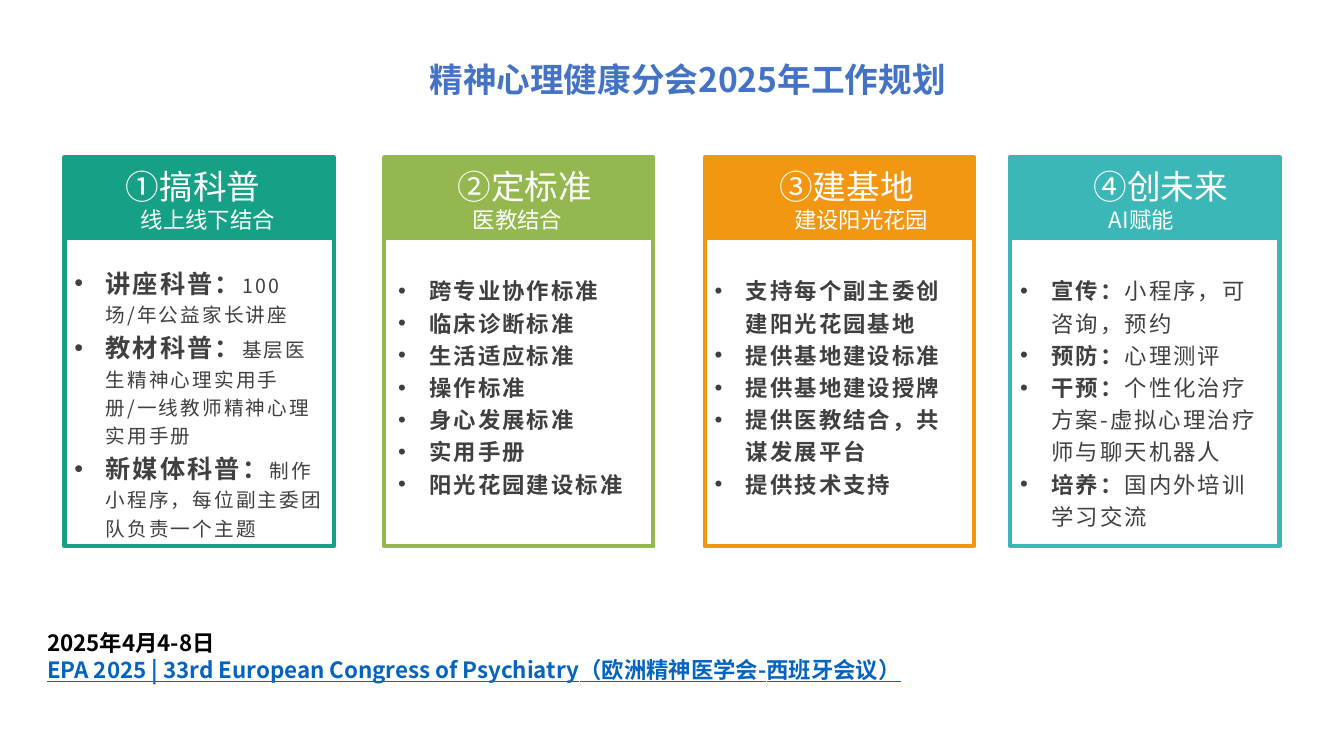
import pptx
import pptx.util
import pptx.dml.color
import pptx.enum.shapes
import pptx.enum.text
import pptx.oxml.ns
import lxml.etree

Inches, Pt = pptx.util.Inches, pptx.util.Pt
SANS = "Noto Sans CJK SC"
COLOURS = {"teal": "16A086", "green": "94B74F", "orange": "F39712", "cyan": "3AB7B6",
           "title": "4472C4", "body": "404040", "white": "FFFFFF", "black": "000000",
           "link": "0563C1"}
TITLE = "精神心理健康分会2025年工作规划"
FOOTER = [("2025年4月4-8日", "black"),
          ("EPA 2025 | 33rd European Congress of Psychiatry（欧洲精神医学会-西班牙会议）", "link")]
CARDS = [
    {"left": 0.64, "colour": "teal", "heading": "①搞科普", "subheading": "线上线下结合",
     "font": SANS, "heading_box": (1.15, 1.89), "body_box": (0.64, 2.55, 2.67, 2.71),
     "sizes": (18, 14), "items": [
         ("讲座科普：", "100场/年公益家长讲座"),
         ("教材科普：", "基层医生精神心理实用手册/一线教师精神心理实用手册"),
         ("新媒体科普：", "制作小程序，每位副主委团队负责一个主题")]},
    {"left": 3.81, "colour": "green", "heading": "②定标准", "subheading": "医教结合",
     "font": SANS, "heading_box": (4.44, 1.53), "body_box": (3.85, 2.65, 2.75, 2.52),
     "sizes": (16, 16), "items": [
         ("跨专业协作标准",), ("临床诊断标准",), ("生活适应标准",), ("操作标准",),
         ("身心发展标准",), ("实用手册",), ("阳光花园建设标准",)]},
    {"left": 6.99, "colour": "orange", "heading": "③建基地", "subheading": "建设阳光花园",
     "font": "Calibri", "heading_box": (7.63, 1.73), "body_box": (6.99, 2.65, 2.67, 2.52),
     "sizes": (16, 16), "items": [
         ("支持每个副主委创建阳光花园基地",), ("提供基地建设标准",), ("提供基地建设授牌",),
         ("提供医教结合，共谋发展平台",), ("提供技术支持",)]},
    {"left": 10.02, "colour": "cyan", "heading": "④创未来", "subheading": "AI赋能",
     "font": SANS, "heading_box": (10.75, 1.53), "body_box": (10.02, 2.65, 2.67, 2.52),
     "sizes": (16, 16), "items": [
         ("宣传：", "小程序，可咨询，预约"), ("预防：", "心理测评"),
         ("干预：", "个性化治疗方案-虚拟心理治疗师与聊天机器人"),
         ("培养：", "国内外培训学习交流")]},
]
CARD_TOP, CARD_WIDTH, CARD_HEIGHT, BAND_HEIGHT = 1.56, 2.67, 3.86, 0.82


def rgb(name):
    return pptx.dml.color.RGBColor.from_string(COLOURS[name])


def set_font(font, size, colour, bold=False, name=SANS):
    font.size, font.bold, font.name = Pt(size), bold, name
    font.color.rgb = rgb(colour)


def add_span(para, text):
    span = para.add_run()
    span.text = text
    properties = span._r.get_or_add_rPr()
    east_asian = lxml.etree.SubElement(properties, pptx.oxml.ns.qn("a:ea"))
    east_asian.set("typeface", SANS)
    return span


def add_box(page, left, top, width, height):
    box = page.shapes.add_textbox(Inches(left), Inches(top), Inches(width), Inches(height))
    box.text_frame.word_wrap = True
    return box.text_frame


def next_para(frame, index):
    return frame.add_paragraph() if index else frame.paragraphs[0]


def add_rectangle(page, left, height, fill=None, line=None):
    box = page.shapes.add_shape(pptx.enum.shapes.MSO_SHAPE.RECTANGLE, Inches(left),
                                Inches(CARD_TOP), Inches(CARD_WIDTH), Inches(height))
    box.shadow.inherit = False
    if fill:
        box.fill.solid()
        box.fill.fore_color.rgb = rgb(fill)
    else:
        box.fill.background()
    if line:
        box.line.color.rgb = rgb(line)
        box.line.width = Pt(3)
    else:
        box.line.fill.background()


def add_bullet(para):
    properties = para._p.get_or_add_pPr()
    properties.set("marL", str(Inches(0.31)))
    properties.set("indent", str(-Inches(0.31)))
    font = lxml.etree.SubElement(properties, pptx.oxml.ns.qn("a:buFont"))
    font.set("typeface", "Arial")
    mark = lxml.etree.SubElement(properties, pptx.oxml.ns.qn("a:buChar"))
    mark.set("char", "•")


def add_card(page, card):
    add_rectangle(page, card["left"], BAND_HEIGHT, fill=card["colour"])
    add_rectangle(page, card["left"], CARD_HEIGHT, line=card["colour"])

    left, width = card["heading_box"]
    frame = add_box(page, left, 1.6, width, 0.77)
    lines = [(card["heading"], 24, card["font"]), (card["subheading"], 16, SANS)]
    for index, (text, size, name) in enumerate(lines):
        para = next_para(frame, index)
        if index:
            para._p.get_or_add_pPr().set("marL", str(Inches(0.15)))
        set_font(para.font, size, "white", name=name)
        add_span(para, text)

    frame = add_box(page, *card["body_box"])
    for index, parts in enumerate(card["items"]):
        para = next_para(frame, index)
        para.line_spacing = 1.2
        add_bullet(para)
        for position, text in enumerate(parts):
            span = add_span(para, text)
            set_font(span.font, card["sizes"][position], "body", bold=position == 0)
            span._r.get_or_add_rPr().set("spc", "150")


def main():
    deck = pptx.Presentation()
    deck.slide_width, deck.slide_height = Inches(13.33), Inches(7.5)
    page = deck.slides.add_slide(deck.slide_layouts[5])

    title = page.shapes.title
    title.left, title.top, title.width, title.height = map(Inches, (4.16, 0.53, 5.36, 0.5))
    frame = title.text_frame
    frame.word_wrap = True
    frame.auto_size = pptx.enum.text.MSO_AUTO_SIZE.NONE
    frame.vertical_anchor = pptx.enum.text.MSO_ANCHOR.TOP
    para = frame.paragraphs[0]
    para.alignment = pptx.enum.text.PP_ALIGN.LEFT
    set_font(para.font, 24, "title", bold=True)
    add_span(para, TITLE)

    for card in CARDS:
        add_card(page, card)

    frame = add_box(page, 0.37, 6.19, 9.56, 0.64)
    for index, (text, colour) in enumerate(FOOTER):
        para = next_para(frame, index)
        set_font(para.font, 16, colour, bold=True)
        para.font.underline = colour == "link"
        add_span(para, text)
    deck.save("out.pptx")


if __name__ == "__main__":
    main()
